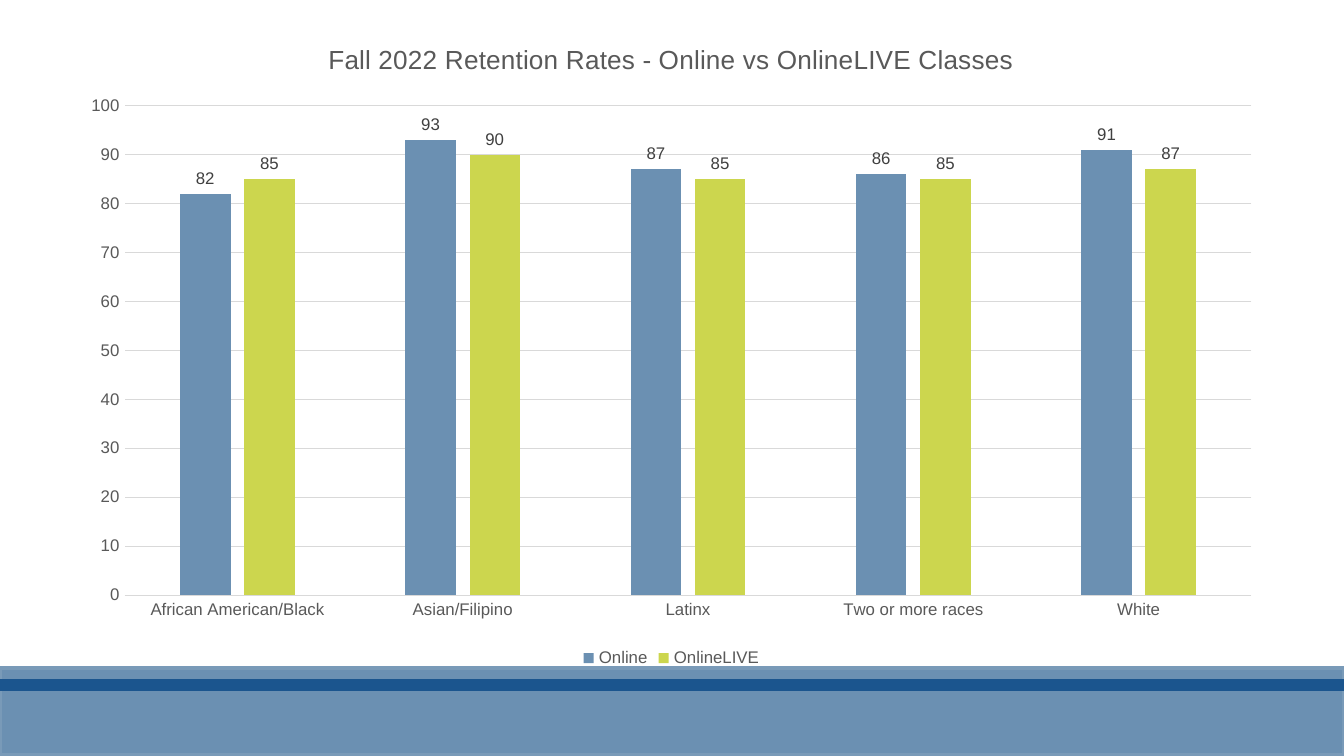
"""Build a slide with a clustered column chart of Fall 2022 retention rates."""
import pptx
import pptx.chart.data
import pptx.dml.color
import pptx.enum.chart
import pptx.enum.shapes
import pptx.util

Inches = pptx.util.Inches
Pt = pptx.util.Pt
COLORS = {
    "blue": "6B90B2",
    "edge": "799AB8",
    "navy": "1B558E",
    "lime": "CCD64E",
    "grid": "D9D9D9",
    "text": "595959",
    "label": "404040",
}


def rgb(name):
    return pptx.dml.color.RGBColor.from_string(COLORS[name])


def set_text(target, text=None, size=9, color="text"):
    if text is not None:
        target.text_frame.text = text
        font = target.text_frame.paragraphs[0].runs[0].font
    else:
        font = target.font
    font.name = "Arial"
    font.size = Pt(size)
    font.bold = False
    font.color.rgb = rgb(color)


prs = pptx.Presentation()
prs.slide_width = Inches(10)
prs.slide_height = Inches(10) * 9 // 16
s = prs.slides.add_slide(prs.slide_layouts[6])

for top, height, fill, line in [(4.97, 0.65, "blue", "edge"), (5.07, 0.06, "navy", "navy")]:
    sp = s.shapes.add_shape(
        pptx.enum.shapes.MSO_SHAPE.RECTANGLE, 0, Inches(top), Inches(10), Inches(height))
    sp.shadow.inherit = False
    sp.fill.solid()
    sp.fill.fore_color.rgb = rgb(fill)
    sp.line.color.rgb = rgb(line)
    sp.line.width = Pt(2)

data = pptx.chart.data.CategoryChartData()
data.categories = ["African American/Black", "Asian/Filipino", "Latinx", "Two or more races", "White"]
data.add_series("Online", [82, 93, 87, 86, 91])
data.add_series("OnlineLIVE", [85, 90, 85, 85, 87])
chart = s.shapes.add_chart(
    pptx.enum.chart.XL_CHART_TYPE.COLUMN_CLUSTERED,
    Inches(0.5), Inches(0.13), Inches(8.99), Inches(4.88), data).chart
chart.font.name = "Arial"
chart.font.size = Pt(10)

chart.has_title = True
set_text(chart.chart_title, "Fall 2022 Retention Rates - Online vs OnlineLIVE Classes", size=14)
chart.chart_title.include_in_layout = False

chart.has_legend = True
chart.legend.position = pptx.enum.chart.XL_LEGEND_POSITION.BOTTOM
chart.legend.include_in_layout = False
set_text(chart.legend)

for axis in (chart.category_axis, chart.value_axis):
    axis.major_tick_mark = pptx.enum.chart.XL_TICK_MARK.NONE
    axis.minor_tick_mark = pptx.enum.chart.XL_TICK_MARK.NONE
    set_text(axis.tick_labels)

gridlines = chart.value_axis.major_gridlines
for line in (chart.category_axis.format.line, gridlines.format.line):
    line.color.rgb = rgb("grid")
    line.width = Pt(0.75)
chart.value_axis.format.line.fill.background()
chart.value_axis.minimum_scale = 0
chart.value_axis.maximum_scale = 100
chart.value_axis.major_unit = 10

plot = chart.plots[0]
plot.gap_width = 219
plot.overlap = -27
plot.vary_by_categories = False
for series, color in zip(plot.series, ("blue", "lime")):
    series.format.fill.solid()
    series.format.fill.fore_color.rgb = rgb(color)
    labels = series.data_labels
    labels.show_value = True
    labels.position = pptx.enum.chart.XL_LABEL_POSITION.OUTSIDE_END
    set_text(labels, color="label")

prs.save("out.pptx")
